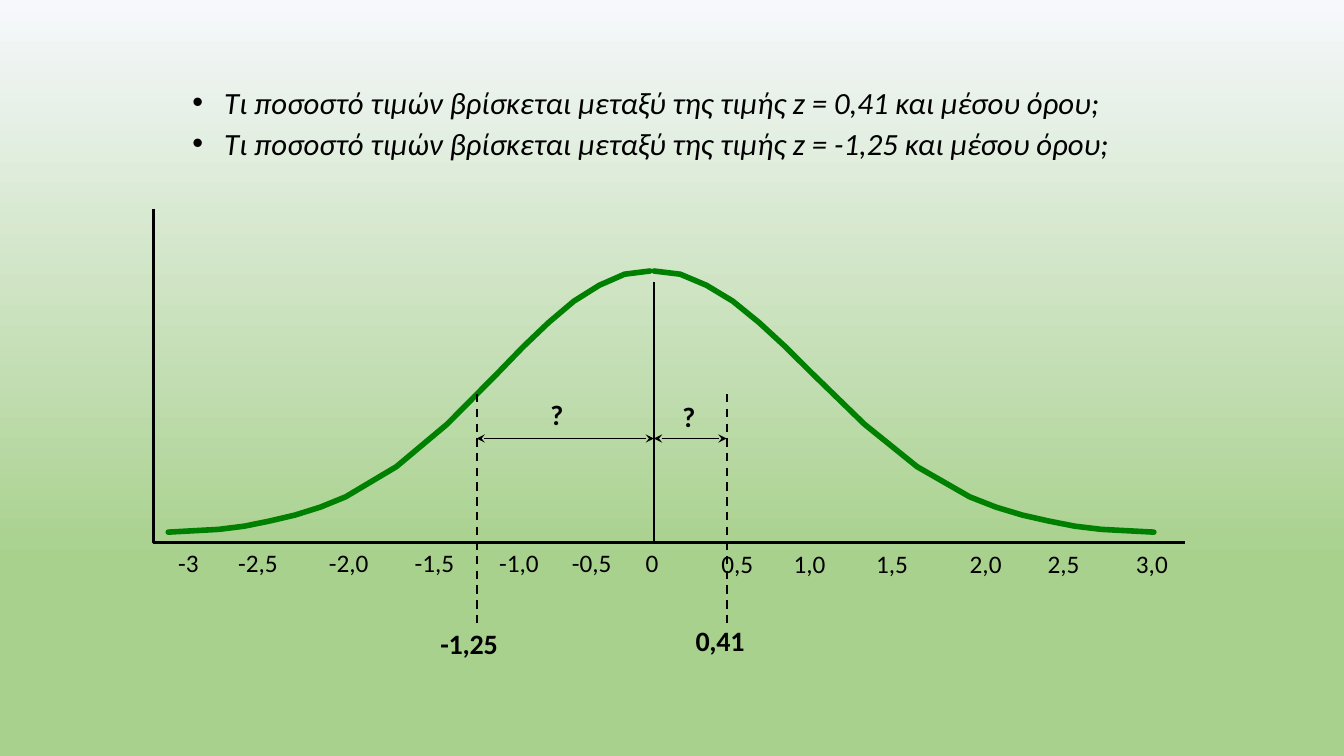
"""Builds a slide asking for the share of values between two z scores and the mean."""
from lxml import etree
from pptx import Presentation
from pptx.dml.color import RGBColor
from pptx.enum.dml import MSO_LINE
from pptx.enum.shapes import MSO_CONNECTOR
from pptx.oxml.ns import qn
from pptx.util import Cm, Pt

STRAIGHT, DASH = MSO_CONNECTOR.STRAIGHT, MSO_LINE.DASH
BLACK = RGBColor(0x00, 0x00, 0x00)
CURVE_GREEN = RGBColor(0x00, 0x80, 0x00)
SKY = RGBColor(0xF6, 0xF8, 0xFC)
GRASS = RGBColor(0xA9, 0xD1, 0x8E)
FONT = "Calibri"
INSET = 0.25

QUESTIONS = [
    "Τι ποσοστό τιμών βρίσκεται μεταξύ της τιμής z = 0,41 και μέσου όρου;",
    "Τι ποσοστό τιμών βρίσκεται μεταξύ της τιμής z = -1,25 και μέσου όρου;",
]
TICK_ROWS = [
    (4.24, 13.67, 13.72, "-3", [("-2,5", 6.5), ("-2,0", 8.79), ("-1,5", 10.95),
                                ("-1,0", 13.08), ("-0,5", 14.91), ("0", 16.43)]),
    (17.93, 13.69, 12.52, "0,5", [("1,0", 20.4), ("1,5", 22.48), ("2,0", 24.84),
                                  ("2,5", 26.8), ("3,0", 29.03)]),
]
AXES = [(3.86, 5.26), (3.86, 13.67), (29.87, 13.67)]
MEAN_X, MEAN_TOP, AXIS_Y = 16.48, 7.11, 13.67
CURVE_STEPS = [0, 2, 3, 4, 5, 6, 7, 9, 11, 13, 14, 15, 16, 17, 18, 19]
CURVE_YS = [13.41, 13.34, 13.26, 13.13, 12.98, 12.78, 12.52, 11.76,
            10.69, 9.4, 8.74, 8.13, 7.59, 7.19, 6.91, 6.83]
CURVE_HALVES = [(29.08, 16.48), (4.24, 16.38)]
Z_XS = [18.31, 12.01]
Z_TOP, Z_BOTTOM, SPAN_Y = 9.93, 15.77, 11.05
LABELS = [
    ("-1,25", 11.1, 15.75, 1.85),
    ("0,41", 17.53, 15.67, 1.57),
    ("?", 17.2, 10.03, 0.76),
    ("?", 13.87, 9.98, 0.76),
]


def add_text(slide, paragraphs, left, top, width, height, *, size, bold=False,
             italic=False, spacing=0, inset_x=0, inset_y=0.0, bullet=None,
             indent=0, gap=0, tabs=()):
    frame = slide.shapes.add_textbox(Cm(left), Cm(top), Cm(width), Cm(height)).text_frame
    frame.word_wrap = True
    frame.margin_left = frame.margin_right = Cm(inset_x)
    frame.margin_top = frame.margin_bottom = Cm(inset_y)
    for index, text in enumerate(paragraphs):
        paragraph = frame.add_paragraph() if index else frame.paragraphs[0]
        properties = paragraph._p.get_or_add_pPr()
        if bullet:
            properties.set("marL", str(Cm(indent)))
            properties.set("indent", str(-Cm(indent)))
            etree.SubElement(properties, qn("a:buFont"), typeface="Arial")
            etree.SubElement(properties, qn("a:buChar"), char=bullet)
        if tabs:
            stops = etree.SubElement(properties, qn("a:tabLst"))
            for stop in tabs:
                etree.SubElement(stops, qn("a:tab"), pos=str(Cm(stop)), algn="ctr")
        if index:
            paragraph.space_before = Pt(gap)
        run = paragraph.add_run()
        run.text = text
        run.font.name, run.font.size = FONT, Pt(size)
        run.font.bold, run.font.italic = bold, italic
        run.font.color.rgb = BLACK
        if spacing:
            run._r.get_or_add_rPr().set("spc", str(round(spacing * 100)))


def add_outline(slide, points, color, width):
    (start_x, start_y), *rest = [(Cm(x), Cm(y)) for x, y in points]
    builder = slide.shapes.build_freeform(start_x, start_y)
    builder.add_line_segments(rest, close=False)
    outline = builder.convert_to_shape()
    outline.shadow.inherit = False
    outline.fill.background()
    outline.line.color.rgb = color
    outline.line.width = Pt(width)
    return outline


def add_line(slide, start, end, width, dash=None, arrows=False):
    line = slide.shapes.add_connector(STRAIGHT, *map(Cm, start + end))
    line.line.color.rgb = BLACK
    line.line.width = Pt(width)
    if dash:
        line.line.dash_style = dash
    if arrows:
        for end_tag in ("a:headEnd", "a:tailEnd"):
            etree.SubElement(line.line._get_or_add_ln(), qn(end_tag), type="stealth")
    etree.SubElement(line._element.spPr, qn("a:effectLst"))


def main():
    deck = Presentation()
    deck.slide_width, deck.slide_height = Cm(33.87), Cm(19.05)
    slide = deck.slides.add_slide(deck.slide_layouts[6])

    backdrop = slide.background.fill
    backdrop.gradient()
    backdrop.gradient_angle = 270
    for stop, color, position in zip(backdrop.gradient_stops, (SKY, GRASS), (0, 0.74)):
        stop.color.rgb = color
        stop.position = position

    add_text(slide, QUESTIONS, 4.85, 1.98, 23.22, 2.11, size=22, italic=True,
             inset_y=0.13, bullet="•", indent=0.8, gap=2.6)

    for left, top, width, first, ticks in TICK_ROWS:
        row = "\t".join([first] + [tick for tick, _ in ticks])
        add_text(slide, [row], left, top, width, 1.02, size=18, inset_x=INSET,
                 inset_y=0.13, tabs=[center - left - INSET for _, center in ticks])

    add_outline(slide, AXES, BLACK, 2)
    for tail_x, peak_x in CURVE_HALVES:
        step = (peak_x - tail_x) / CURVE_STEPS[-1]
        points = [(tail_x + count * step, y) for count, y in zip(CURVE_STEPS, CURVE_YS)]
        curve = add_outline(slide, points, CURVE_GREEN, 4)
        curve.line._get_or_add_ln().set("cap", "rnd")

    add_line(slide, (MEAN_X, MEAN_TOP), (MEAN_X, AXIS_Y), 1)
    for z_x in Z_XS:
        add_line(slide, (min(z_x, MEAN_X), SPAN_Y), (max(z_x, MEAN_X), SPAN_Y), 1, arrows=True)
        add_line(slide, (z_x, Z_TOP), (z_x, Z_BOTTOM), 1.5, dash=DASH)

    for label, left, top, width in LABELS:
        add_text(slide, [label], left, top, width, 0.91, size=20, bold=True,
                 spacing=-0.2, inset_y=0.03)

    deck.save("out.pptx")


if __name__ == "__main__":
    main()
